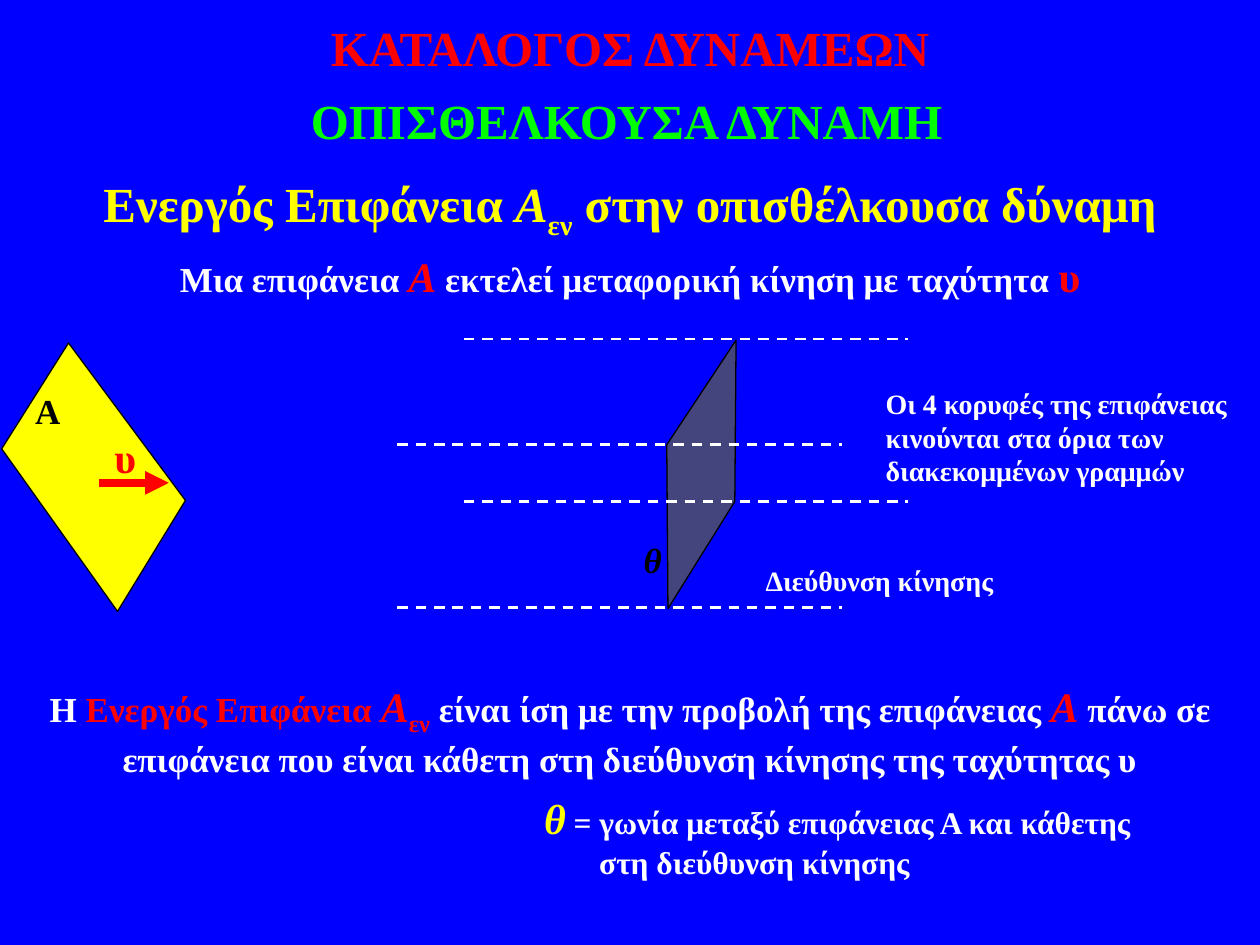
from pptx import Presentation
from pptx.dml.color import RGBColor as RGB
from pptx.enum.dml import MSO_LINE_DASH_STYLE as Dash
from pptx.enum.shapes import MSO_CONNECTOR as Link
from pptx.enum.text import MSO_ANCHOR as Anchor, MSO_AUTO_SIZE as Auto, PP_ALIGN as Align
from pptx.oxml.ns import qn
from pptx.util import Pt
from lxml.etree import SubElement as Sub

BLUE = RGB(0x00, 0x00, 0xFF)
RED = RGB(0xFF, 0x00, 0x00)
GREEN = RGB(0x00, 0xFF, 0x00)
YELLOW = RGB(0xFF, 0xFF, 0x00)
WHITE = RGB(0xFF, 0xFF, 0xFF)
BLACK = RGB(0x00, 0x00, 0x00)
GREY = RGB(0x59, 0x59, 0x59)
FONT = "Times New Roman"


def add_text(slide, box, paras, size, color, align=Align.LEFT, wrap=True,
             anchor=Anchor.TOP):
    """Each paragraph is a list of (text, changes to the base font)."""
    shape = slide.shapes.add_textbox(*map(Pt, box))
    frame = shape.text_frame
    frame.word_wrap = wrap
    frame.auto_size = Auto.NONE if anchor == Anchor.MIDDLE else Auto.SHAPE_TO_FIT_TEXT
    frame.vertical_anchor = anchor
    for i, runs in enumerate(paras):
        para = frame.add_paragraph() if i else frame.paragraphs[0]
        para.alignment = align
        base = para.font
        base.name, base.size, base.bold = FONT, Pt(size), True
        base.color.rgb = color
        for words, diff in runs:
            run = para.add_run()
            run.text = words
            if "size" in diff:
                run.font.size = Pt(diff["size"])
            if "color" in diff:
                run.font.color.rgb = diff["color"]
            if "italic" in diff:
                run.font.italic = diff["italic"]
            if "sub" in diff:
                run._r.get_or_add_rPr().set("baseline", "-25000")
    return frame


def add_line(slide, start, end, color, width):
    line = slide.shapes.add_connector(Link.STRAIGHT, *map(Pt, start + end))
    line.line.color.rgb = color
    line.line.width = Pt(width)
    Sub(line._element.spPr, qn("a:effectLst"))
    return line


def add_plate(slide, left, top, points, color):
    spots = [(Pt(left + x), Pt(top + y)) for x, y in points]
    pen = slide.shapes.build_freeform(*spots[0], scale=1.0)
    pen.add_line_segments(spots[1:], close=True)
    plate = pen.convert_to_shape()
    plate.shadow.inherit = False
    plate.fill.solid()
    plate.fill.fore_color.rgb = color
    plate.line.color.rgb = BLACK
    plate.line.width = Pt(0.75)
    return plate


def heads(slide, left, top, width):
    """Three headings and the opening statement."""
    add_text(slide, (left + 54, top, width - 108, 54), [[("ΚΑΤΑΛΟΓΟΣ ΔΥΝΑΜΕΩΝ", {})]],
             28, RED, Align.CENTER, anchor=Anchor.MIDDLE)
    add_text(slide, (left + 170.6, top + 48.2, 378.7, 41), [[("ΟΠΙΣΘΕΛΚΟΥΣΑ ΔΥΝΑΜΗ", {})]],
             28, GREEN, wrap=False)
    add_text(slide, (left, top + 95.8, width, 41), [[
        ("Ενεργός Επιφάνεια ", {}), ("Α", {"italic": True}), ("εν", {"sub": True}),
        (" στην οπισθέλκουσα δύναμη", {})]], 28, YELLOW, Align.CENTER)
    add_text(slide, (left + 2, top + 139.7, width - 4, 36), [[
        ("Μια επιφάνεια ", {}), ("Α", {"size": 24, "color": RED, "italic": True}),
        (" εκτελεί μεταφορική κίνηση με ταχύτητα ", {}),
        ("υ", {"size": 24, "color": RED})]], 20, WHITE, Align.CENTER)


def mover(slide, left, top):
    """Yellow surface with its velocity arrow."""
    add_plate(slide, left, top, [(0, 60.5), (66.2, 153.4), (105, 90), (38.2, 0)], YELLOW)
    arrow = add_line(slide, (left + 55.5, top + 79.9), (left + 95.5, top + 79.9), RED, 4.5)
    Sub(arrow.line._get_or_add_ln(), qn("a:tailEnd"), type="triangle")
    add_text(slide, (left + 12, top + 23, 29.5, 31.7), [[("Α", {})]], 20, BLACK, wrap=False)
    add_text(slide, (left + 57.3, top + 46.8, 27.4, 36), [[("υ", {})]], 24, RED, wrap=False)


def tracks(slide, left, top):
    """Grey surface, the dashed paths of its corners, and their labels."""
    plate = add_plate(slide, left + 154, top + 0.7,
                      [(0, 59.8), (39.6, 0), (38.9, 92.2), (0.7, 153.4)], GREY)
    tint = plate._element.spPr.find(qn("a:solidFill"))[0]
    Sub(tint, qn("a:alpha"), val="78000")
    for x, y in [(38, 0), (0, 60.4), (38, 92.8), (0, 153.3)]:
        path = add_line(slide, (left + x, top + y), (left + x + 254, top + y), WHITE, 1.5)
        path.line.dash_style = Dash.DASH
    add_text(slide, (left + 203.5, top + 116.6, 152, 36), [[
        ("Διεύθυνση κίνησης", {}), (" ", {"size": 24})]], 16, WHITE, wrap=False)
    add_text(slide, (left + 272, top + 23.7, 214.5, 65.5), [[
        ("Οι 4 κορυφές της επιφάνειας κινούνται στα όρια των διακεκομμένων γραμμών", {})]],
        16, WHITE)
    add_text(slide, (left + 133.7, top + 110.2, 25.2, 31.7), [[("θ", {"italic": True})]],
             20, BLACK, wrap=False)


def rule(slide, left, top, width):
    """Definition of the effective surface and of the angle."""
    big = {"size": 24, "color": RED, "italic": True}
    add_text(slide, (left, top, width, 60.5), [[
        ("Η ", {}), ("Ενεργός Επιφάνεια ", {"color": RED}), ("Α", big),
        ("εν", {"size": 24, "color": RED, "sub": True}),
        (" είναι ίση με την προβολή της επιφάνειας ", {}), ("Α", big),
        (" πάνω σε επιφάνεια που είναι κάθετη στη διεύθυνση κίνησης της ταχύτητας υ", {})]],
        20, WHITE, Align.CENTER)
    frame = add_text(slide, (left + 301.8, top + 64.1, 370.8, 58.3), [
        [("θ", {"size": 24, "color": YELLOW, "italic": True}),
         (" = γωνία μεταξύ επιφάνειας Α και κάθετης", {})],
        [("στη διεύθυνση κίνησης", {})]], 18, WHITE)
    frame.paragraphs[1]._p.get_or_add_pPr().set("marL", str(Pt(31.5)))


def main():
    deck = Presentation()
    deck.slide_width, deck.slide_height = Pt(720), Pt(540)
    slide = deck.slides.add_slide(deck.slide_layouts[6])
    back = slide.background.fill
    back.solid()
    back.fore_color.rgb = BLUE
    heads(slide, 0, 0, 720)
    mover(slide, 1, 196)
    tracks(slide, 227, 193.7)
    rule(slide, 2, 385.2, 716)
    deck.save("out.pptx")


if __name__ == "__main__":
    main()
